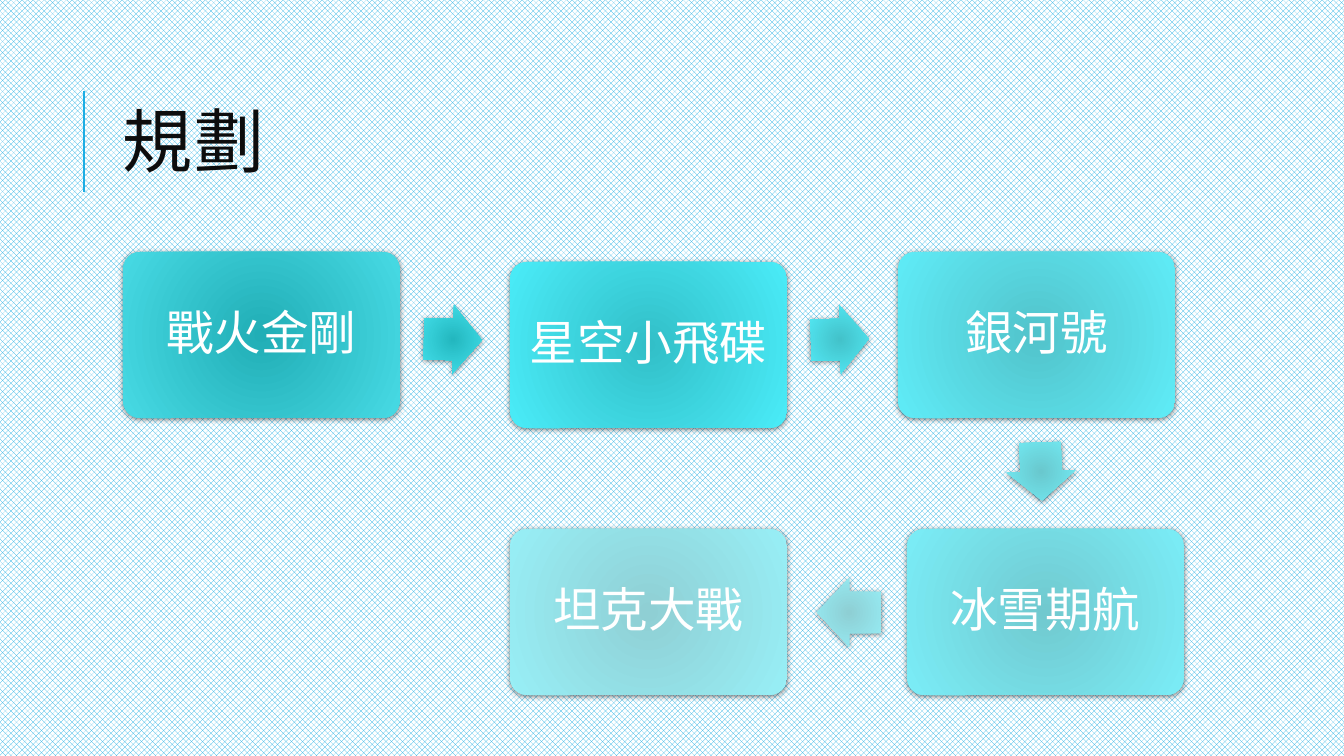
"""Build the planning slide: five stages joined by arrows."""
from typing import NamedTuple

from lxml import etree
from pptx import Presentation
from pptx import util as u
from pptx.dml.color import RGBColor
from pptx.enum import dml, shapes, text
from pptx.oxml import parse_xml
from pptx.oxml.ns import nsdecls, qn

SCALE = 12192000 / 1344
COLORS = {"accent": "1CADE4", "white": "FFFFFF", "title": "0D0D0D", "shadow": "000000"}
TITLE_FONT, CJK_FONT = "Cabin", "Noto Sans CJK JP"
STAGE_WIDTH, STAGE_HEIGHT, ARROW_HEIGHT = 277, 166, 69


class Stage(NamedTuple):
    label: str
    left: int
    top: int
    inner: str
    outer: str


class Arrow(NamedTuple):
    left: int
    top: int
    width: int
    rotation: float
    inner: str
    outer: str


STAGES = [
    Stage("戰火金剛", 123, 252, "21AEB6", "47DAE4"),
    Stage("星空小飛碟", 510, 262, "32BFC8", "4AECF8"),
    Stage("銀河號", 898, 252, "52C3CB", "5FECF7"),
    Stage("冰雪期航", 907, 529, "71C9CF", "7AEDF7"),
    Stage("坦克大戰", 510, 529, "8FCFD4", "98EFF6"),
]
ARROWS = [
    Arrow(424, 305, 58, 1.4, "23B7BF", "46E4EF"),
    Arrow(811, 305, 58, 358.6, "43C2CA", "54EDF9"),
    Arrow(1012, 437, 58, 88, "69C8CE", "73EEF7"),
    Arrow(817, 578, 64, 180, "8ECFD4", "97EFF7"),
]


def px(length: int) -> u.Emu:
    return u.Emu(round(length * SCALE))


def rgb(name: str) -> RGBColor:
    return RGBColor.from_string(COLORS[name])


def write(frame, wording: str, font_name: str, size: int, color: str, line_spacing: float):
    frame.word_wrap = True
    frame.vertical_anchor = text.MSO_ANCHOR.MIDDLE
    frame.text = wording
    paragraph = frame.paragraphs[0]
    paragraph.line_spacing = line_spacing
    run = paragraph.runs[0]
    run.font.name = font_name
    run.font.size = u.Pt(size)
    run.font.color.rgb = rgb(color)
    properties = run.font._element
    properties.find(qn("a:latin")).addnext(
        parse_xml(f'<a:ea {nsdecls("a")} typeface="{CJK_FONT}"/>'))
    return paragraph


def add_glowing_shape(slide, kind, left: int, top: int, width: int, height: int,
                      inner: str, outer: str):
    shape = slide.shapes.add_shape(kind, px(left), px(top), px(width), px(height))
    shape.line.fill.background()
    shape.fill.gradient()
    for stop, color in zip(shape.fill.gradient_stops, (inner, outer)):
        stop.color.rgb = RGBColor.from_string(color)
    first, last = shape.fill.gradient_stops
    first.position, last.position = 0, 1
    gradient = shape._element.spPr.find(qn("a:gradFill"))
    gradient.replace(gradient.find(qn("a:lin")), parse_xml(
        f'<a:path {nsdecls("a")} path="circle">'
        '<a:fillToRect l="100000" t="100000" r="100000" b="100000"/></a:path>'))
    shape.shadow.inherit = False
    shape._element.spPr.find(qn("a:effectLst")).append(parse_xml(
        f'<a:outerShdw {nsdecls("a")} blurRad="{u.Pt(4)}" dist="{u.Pt(1)}" dir="5400000" '
        f'rotWithShape="0"><a:srgbClr val="{COLORS["shadow"]}">'
        '<a:alpha val="50000"/></a:srgbClr></a:outerShdw>'))
    return shape


def add_stage(slide, stage: Stage) -> None:
    shape = add_glowing_shape(slide, shapes.MSO_SHAPE.ROUNDED_RECTANGLE, stage.left, stage.top,
                              STAGE_WIDTH, STAGE_HEIGHT, stage.inner, stage.outer)
    shape.adjustments[0] = 0.1
    frame = shape.text_frame
    frame.margin_left = frame.margin_right = px(12)
    frame.margin_top = frame.margin_bottom = px(12)
    paragraph = write(frame, stage.label, CJK_FONT, 34, "white", 0.9)
    paragraph.alignment = text.PP_ALIGN.CENTER


def add_arrow(slide, arrow: Arrow) -> None:
    shape = add_glowing_shape(slide, shapes.MSO_SHAPE.RIGHT_ARROW, arrow.left, arrow.top,
                              arrow.width, ARROW_HEIGHT, arrow.inner, arrow.outer)
    shape.adjustments[0], shape.adjustments[1] = 0.6, 0.5
    shape.rotation = arrow.rotation


def add_title(slide) -> None:
    rule = slide.shapes.add_connector(shapes.MSO_CONNECTOR.STRAIGHT,
                                      px(84), px(192), px(84), px(91))
    rule.line.color.rgb = rgb("accent")
    rule.line.width = u.Pt(1.5)
    etree.SubElement(rule._element.spPr, qn("a:effectLst"))
    box = slide.shapes.add_textbox(px(113), px(65), px(1072), px(165))
    paragraph = write(box.text_frame, "規劃", TITLE_FONT, 50, "title", 0.8)
    paragraph.runs[0].font._element.set("spc", "100")


def main() -> None:
    presentation = Presentation()
    presentation.slide_width, presentation.slide_height = px(1344), px(756)
    slide = presentation.slides.add_slide(presentation.slide_layouts[6])
    background = slide.background.fill
    background.patterned()
    background.pattern = dml.MSO_PATTERN.OUTLINED_DIAMOND
    background.fore_color.rgb = rgb("accent")
    background.back_color.rgb = rgb("white")
    add_title(slide)
    for stage in STAGES:
        add_stage(slide, stage)
    for arrow in ARROWS:
        add_arrow(slide, arrow)
    presentation.save("out.pptx")


if __name__ == "__main__":
    main()
